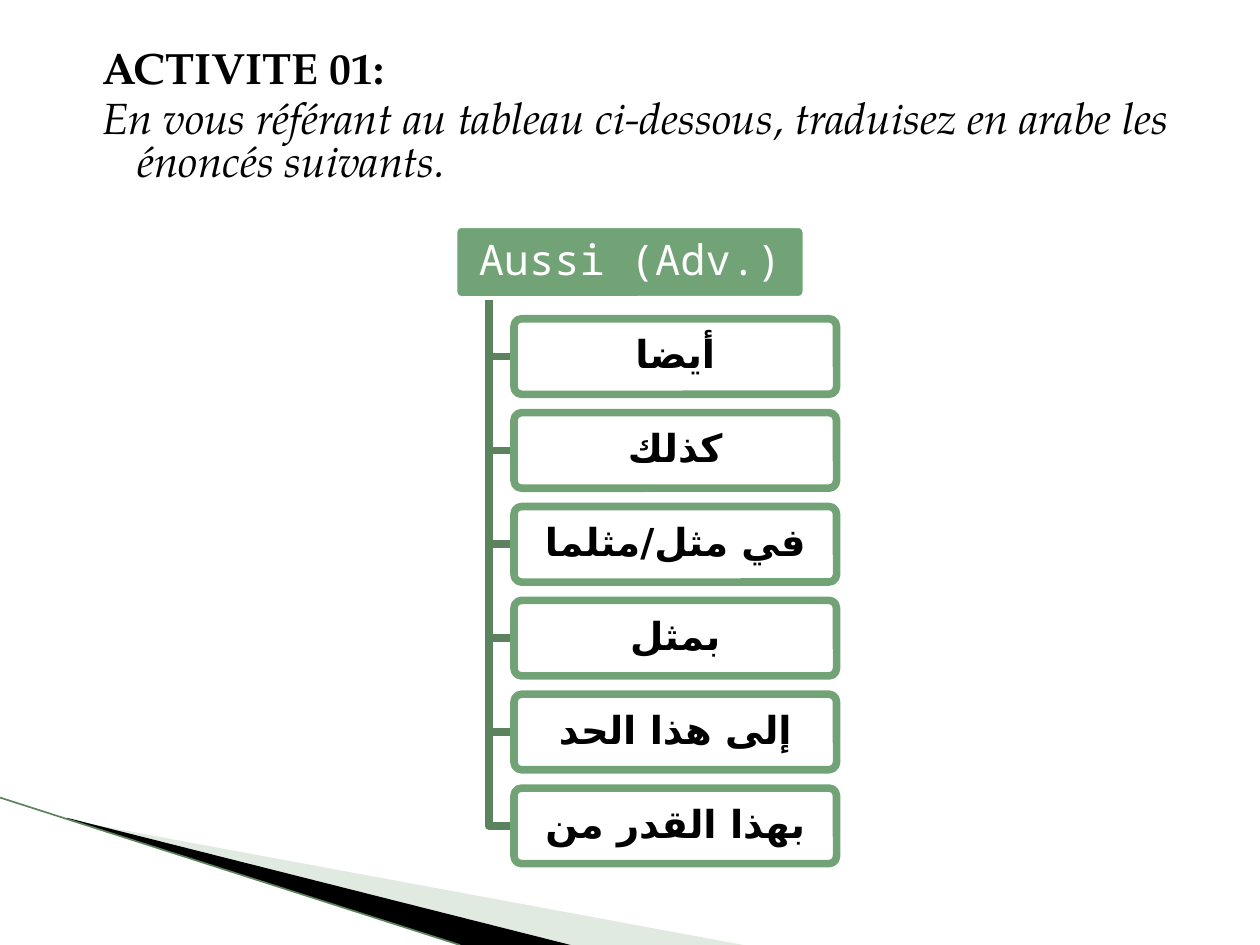
"""Build the slide that lists the Arabic translations of the adverb 'aussi'."""
from lxml.etree import Element, SubElement
from pptx import Presentation
from pptx.dml.color import RGBColor
from pptx.enum.shapes import MSO_CONNECTOR as Connector, MSO_SHAPE as Shape
from pptx.enum.text import MSO_ANCHOR as Anchor, PP_ALIGN as Align
from pptx.oxml.ns import qn
from pptx.util import Inches, Pt

BLACK = RGBColor(0x00, 0x00, 0x00)
WHITE = RGBColor(0xFF, 0xFF, 0xFF)
GREEN = RGBColor(0x72, 0xA3, 0x76)
DARK_GREEN = RGBColor(0x5B, 0x83, 0x5E)
PALE_GREEN = RGBColor(0xB3, 0xCB, 0xB5)

TITLE = "ACTIVITE 01:"
INSTRUCTION = "En vous référant au tableau ci-dessous, traduisez en arabe les énoncés suivants."
ADVERB = "Aussi (Adv.)"
TRANSLATIONS = ["أيضا", "كذلك", "في مثل/مثلما", "بمثل", "إلى هذا الحد", "بهذا القدر من"]

PALE_WEDGE = [(0.55, 6.51), (5.9, 7.5), (4.52, 7.5), (0.55, 6.5)]
BLACK_WEDGE = [(0.53, 6.49), (4.53, 7.5), (3.66, 7.5), (0.54, 6.5)]

BODY_FONT, ADVERB_FONT, BOX_FONT = "TeX Gyre Pagella", "Noto Sans Mono", "Courier New"
ARABIC_FONT = "DejaVu Sans"
LINE_WIDTH = Pt(4.33)
BOX_HEIGHT, BOX_PITCH = 0.6, 0.745
HEAD_LEFT, HEAD_TOP, HEAD_WIDTH = 3.6, 1.78, 2.8
TRUNK_X, BOX_LEFT, BOX_TOP, BOX_WIDTH = 3.88, 4.08, 2.53, 2.56


def set_alpha(shape, percent):
    color = shape.fill._xPr.find(qn("a:solidFill"))[0]
    SubElement(color, qn("a:alpha")).set("val", str(percent * 1000))


def add_outline(page, points, close):
    corners = [(Inches(x), Inches(y)) for x, y in points]
    builder = page.shapes.build_freeform(*corners[0])
    builder.add_line_segments(corners[1:], close=close)
    outline = builder.convert_to_shape()
    outline.shadow.inherit = False
    return outline


def add_wedge(page, points, color):
    wedge = add_outline(page, points, True)
    wedge.fill.solid()
    wedge.fill.fore_color.rgb = color
    wedge.line.fill.background()
    return wedge


def style_span(span, font_name, size, color):
    span.font.name = font_name
    span.font.size = Pt(size)
    span.font.color.rgb = color


def add_box(page, left, top, width, text, fill, line, font_name, size, color):
    box = page.shapes.add_shape(Shape.ROUNDED_RECTANGLE, Inches(left), Inches(top),
                                Inches(width), Inches(BOX_HEIGHT))
    box.adjustments[0] = 0.1
    box.shadow.inherit = False
    box.fill.solid()
    box.fill.fore_color.rgb = fill
    box.line.color.rgb = line
    box.line.width = LINE_WIDTH
    frame = box.text_frame
    frame.word_wrap = True
    frame.vertical_anchor = Anchor.MIDDLE
    frame.margin_left = frame.margin_right = Inches(0.05)
    frame.margin_top = frame.margin_bottom = Inches(0.03)
    frame.text = text
    para = frame.paragraphs[0]
    para.alignment = Align.CENTER
    para.line_spacing = 0.9
    style_span(para.runs[0], font_name, size, color)
    return box


def add_decoration(page):
    set_alpha(add_wedge(page, PALE_WEDGE, PALE_GREEN), 40)
    add_wedge(page, BLACK_WEDGE, BLACK)
    edge = page.shapes.add_connector(Connector.STRAIGHT, Inches(0), Inches(6.33),
                                     Inches(3.65), Inches(7.5))
    edge.line.color.rgb = DARK_GREEN
    edge.line.width = Pt(0.95)
    SubElement(edge._element.spPr, qn("a:effectLst"))


def hide_borders(cell):
    properties = cell._tc.get_or_add_tcPr()
    for position, side in enumerate(("lnL", "lnR", "lnT", "lnB")):
        border = Element(qn(f"a:{side}"))
        SubElement(border, qn("a:noFill"))
        properties.insert(position, border)


def add_instructions(page):
    table = page.shapes.add_table(1, 1, Inches(0.59), Inches(0.36),
                                  Inches(8.82), Inches(6.85)).table
    table.first_row = table.horz_banding = False
    cell = table.cell(0, 0)
    cell.fill.background()
    hide_borders(cell)
    cell.text_frame.text = f"{TITLE}\n{INSTRUCTION}"
    title, instruction = cell.text_frame.paragraphs
    for para in (title, instruction):
        para.line_spacing = Pt(25)
        properties = para._p.get_or_add_pPr()
        properties.set("marL", str(Inches(0.4)))
        properties.set("indent", str(Inches(-0.28)))
        style_span(para.runs[0], BODY_FONT, 25, BLACK)
    title.runs[0].font.bold = True
    instruction.space_before = Pt(4)
    instruction.runs[0].font.italic = True


def add_translations(page):
    add_box(page, HEAD_LEFT, HEAD_TOP, HEAD_WIDTH, ADVERB, GREEN, WHITE,
            ADVERB_FONT, 24, WHITE)
    trunk_top = HEAD_TOP + BOX_HEIGHT
    for index, word in enumerate(TRANSLATIONS):
        top = BOX_TOP + index * BOX_PITCH
        middle = top + BOX_HEIGHT / 2
        branch = add_outline(page, [(TRUNK_X, trunk_top), (TRUNK_X, middle),
                                    (BOX_LEFT, middle)], False)
        branch.fill.background()
        branch.line.color.rgb = DARK_GREEN
        branch.line.width = LINE_WIDTH
        box = add_box(page, BOX_LEFT, top, BOX_WIDTH, word, WHITE, GREEN,
                      BOX_FONT, 22, BLACK)
        set_alpha(box, 90)
        font = box.text_frame.paragraphs[0].runs[0].font
        font.bold = True
        SubElement(font._element, qn("a:cs")).set("typeface", ARABIC_FONT)


def main():
    deck = Presentation()
    deck.slide_width, deck.slide_height = Inches(10), Inches(7.5)
    page = deck.slides.add_slide(deck.slide_layouts[6])
    add_decoration(page)
    add_instructions(page)
    add_translations(page)
    deck.save("out.pptx")


if __name__ == "__main__":
    main()
